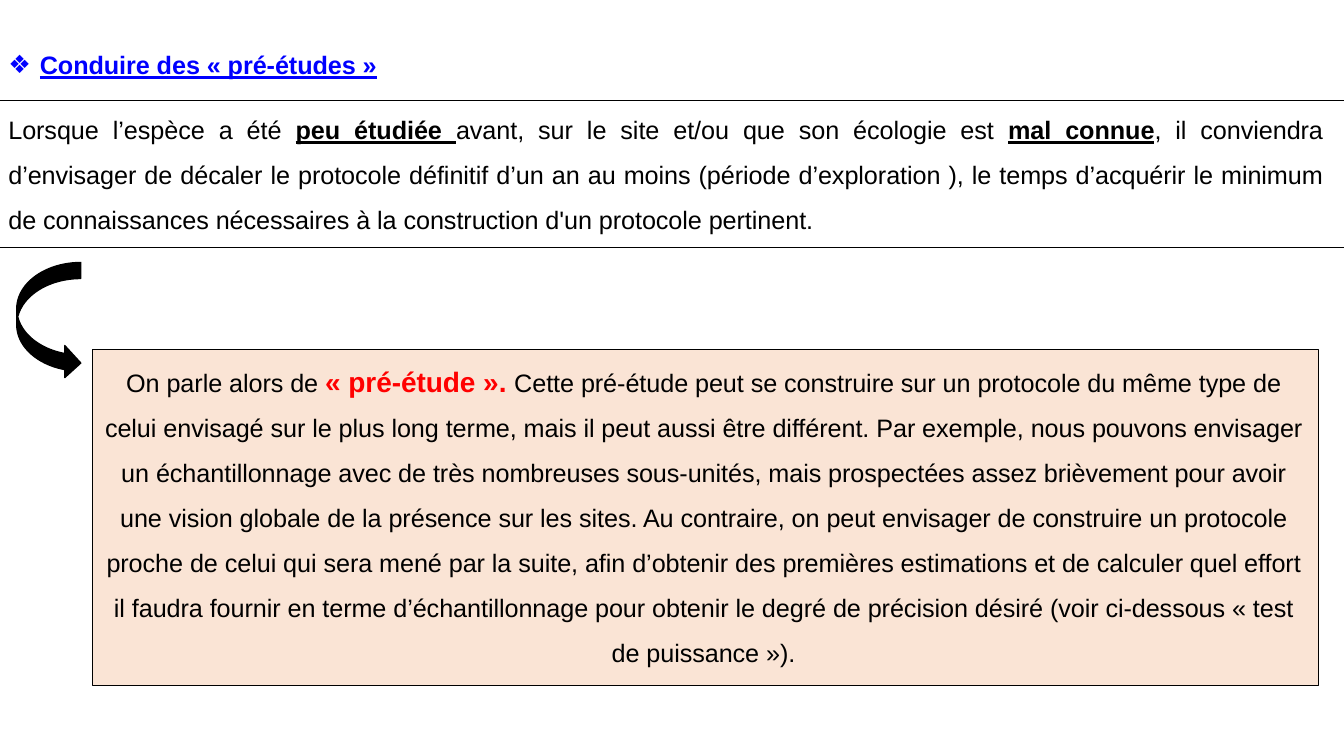
from pptx import Presentation
from pptx.dml.color import RGBColor as Rgb
from pptx.enum.shapes import MSO_CONNECTOR as Conn, MSO_SHAPE as Shape
from pptx.enum.text import (MSO_AUTO_SIZE as Fit, MSO_UNDERLINE as Under,
                            PP_ALIGN as Align)
from pptx.oxml.ns import qn
from pptx.util import Pt
from lxml.etree import SubElement as Sub

PX = 9525  # EMU in one px
WIDE, HIGH = 1280, 720
FONT = "Arial"
COL = {"ink": "000000", "blue": "0000FF", "red": "FF0000", "peach": "FAE4D5"}
EDGE = Pt(0.96)
LEAD = 1.49  # line spacing of body text

# Run styles: size, colour, bold, underline
HEAD = (18, "blue", True, Under.HEAVY_LINE)
BODY = (18, "ink", False, Under.NONE)
MARK = (18, "ink", True, Under.HEAVY_LINE)
TERM = (20, "red", True, Under.NONE)

INTRO = [
    ("Lorsque l’espèce a été ", BODY),
    ("peu étudiée ", MARK),
    ("avant, sur le site et/ou que son écologie est ", BODY),
    ("mal connue", MARK),
    (", il conviendra d’envisager de décaler le protocole définitif d’un an "
     "au moins (période d’exploration ), le temps d’acquérir le minimum de "
     "connaissances nécessaires à la construction d'un protocole pertinent.", BODY),
]
STUDY = [
    ("On parle alors de ", BODY),
    ("« pré-étude ». ", TERM),
    ("Cette pré-étude peut se construire sur un protocole du même type de "
     "celui envisagé sur le plus long terme, mais il peut aussi être différent. "
     "Par exemple, nous pouvons envisager un échantillonnage avec de très "
     "nombreuses sous-unités, mais prospectées assez brièvement pour avoir "
     "une vision globale de la présence sur les sites. Au contraire, on peut "
     "envisager de construire un protocole proche de celui qui sera mené par "
     "la suite, afin d’obtenir des premières estimations et de calculer quel "
     "effort il faudra fournir en terme d’échantillonnage pour obtenir le "
     "degré de précision désiré (voir ci-dessous « test de puissance »).", BODY),
]


def px(*vals):
    return [val * PX for val in vals]


def tint(hue):
    return Rgb.from_string(COL[hue])


def add_text(slide, box, top, right):
    frame = slide.shapes.add_textbox(*px(*box)).text_frame
    frame.word_wrap = True
    frame.auto_size = Fit.SHAPE_TO_FIT_TEXT
    frame.margin_left = frame.margin_bottom = 0
    frame.margin_top, frame.margin_right = px(top, right)
    return frame


def fill_para(para, runs, align, before, lines=1.0, left=1, hang=0):
    para.alignment = align
    para.line_spacing = lines
    para.space_before = Pt(before)
    props = para._p.get_or_add_pPr()
    props.set("marL", str(left * PX))
    props.set("indent", str(-hang * PX))
    for text, (size, hue, bold, under) in runs:
        run = para.add_run()
        run.text = text
        font = run.font
        font.name, font.size = FONT, Pt(size)
        font.bold, font.underline = bold, under
        font.color.rgb = tint(hue)
        font._element.set("spc", "-5")


def add_bullet(para, char):
    props = para._p.get_or_add_pPr()
    Sub(props, qn("a:buFont")).set("typeface", FONT)
    Sub(props, qn("a:buChar")).set("char", char)


def add_rule(slide, y):
    rule = slide.shapes.add_connector(Conn.STRAIGHT, *px(0, y, WIDE, y))
    rule.line.color.rgb = tint("ink")
    rule.line.width = EDGE
    Sub(rule._element.spPr, qn("a:effectLst"))


def add_form(slide, kind, box, hue):
    form = slide.shapes.add_shape(kind, *px(*box))
    form.shadow.inherit = False
    form.fill.solid()
    form.fill.fore_color.rgb = tint(hue)
    form.line.color.rgb = tint("ink")
    form.line.width = EDGE


def add_intro(slide, x, y, w, h):
    # Rules above and below the paragraph
    for drop in (50, 190):
        add_rule(slide, y + drop)
    # Heading and paragraph
    frame = add_text(slide, (x, y, w, h), 1, 12)
    head = frame.paragraphs[0]
    fill_para(head, [("Conduire des « pré-études »", HEAD)],
              Align.JUSTIFY, 1, left=31, hang=30)
    add_bullet(head, "❖")
    fill_para(frame.add_paragraph(), INTRO, Align.JUSTIFY, 14.2, LEAD)


def add_study(slide, x, y, w, h):
    # Tinted panel and its text
    add_form(slide, Shape.RECTANGLE, (x, y, w, h), "peach")
    frame = add_text(slide, (x + 9, y - 4, w - 18, h - 8), 2, 5)
    fill_para(frame.paragraphs[0], STUDY, Align.CENTER, 1.7, LEAD)
    # Arrow leading into the panel
    add_form(slide, Shape.CURVED_RIGHT_ARROW, (x - 72, y - 83, 61, 111), "ink")


def main():
    deck = Presentation()
    deck.slide_width, deck.slide_height = px(WIDE, HIGH)
    slide = deck.slides.add_slide(deck.slide_layouts[6])
    add_intro(slide, 7, 46, 1265, 180)
    add_study(slide, 88, 333, 1168, 320)
    deck.save("out.pptx")


if __name__ == "__main__":
    main()
